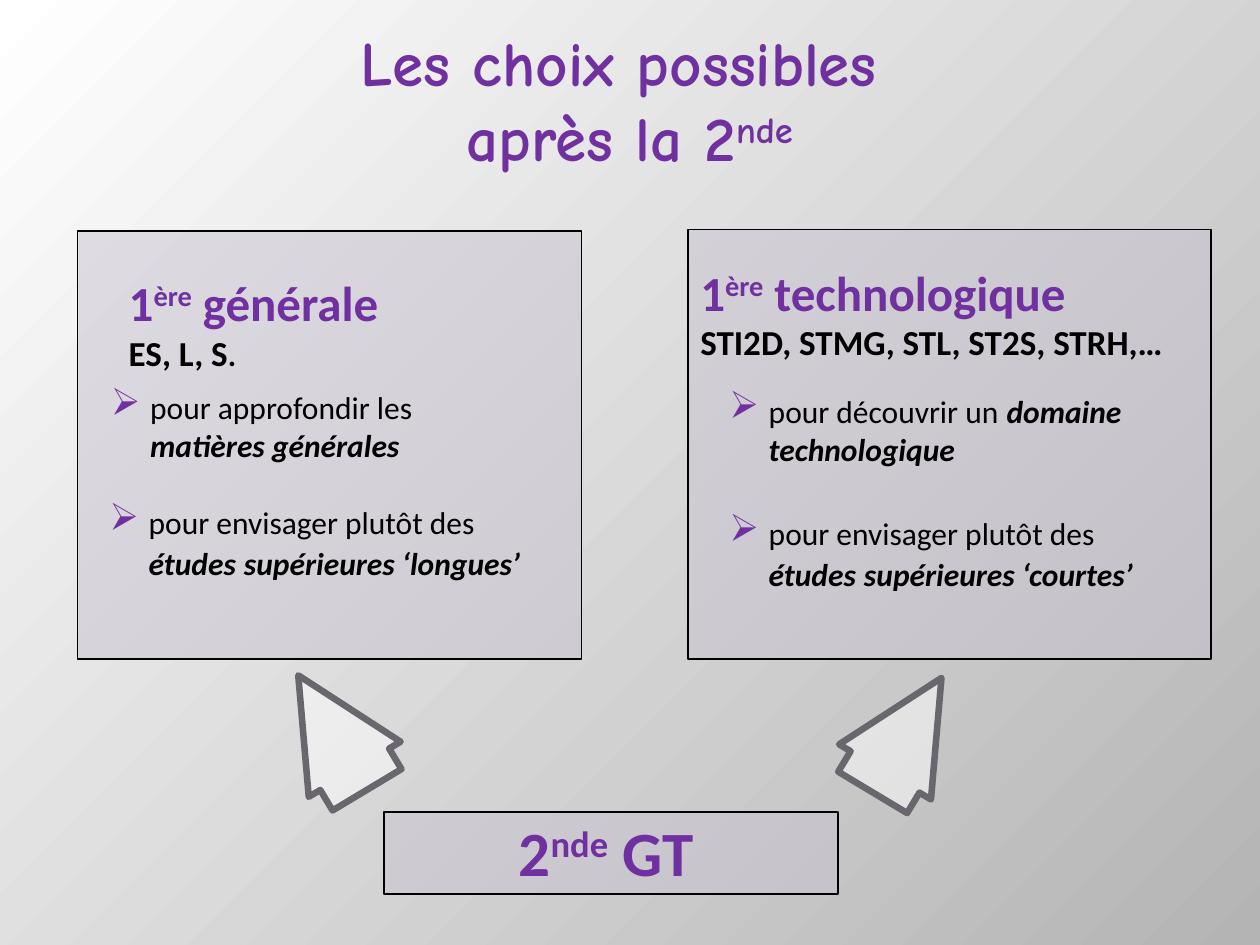
from lxml import etree
from pptx import Presentation
from pptx.dml.color import RGBColor
from pptx.enum.shapes import MSO_SHAPE
from pptx.enum.text import MSO_ANCHOR, PP_ALIGN
from pptx.oxml.ns import qn
from pptx.util import Pt

RECTANGLE, LEFT_ARROW = MSO_SHAPE.RECTANGLE, MSO_SHAPE.LEFT_ARROW
CENTER, LEFT = PP_ALIGN.CENTER, PP_ALIGN.LEFT
MIDDLE, TOP = MSO_ANCHOR.MIDDLE, MSO_ANCHOR.TOP
COLORS = {"purple": "7030A0", "black": "000000", "white": "FFFFFF",
          "silver": "B4B4B4", "lilac": "C9C2D1", "slate": "69676D"}

prs = Presentation()
prs.slide_width, prs.slide_height = Pt(720), Pt(540)
slide = prs.slides.add_slide(prs.slide_layouts[6])


def add_panel(kind, place, fill, line, weight):
    panel = slide.shapes.add_shape(kind, *map(Pt, place))
    panel.shadow.inherit = False
    panel.fill.solid()
    panel.fill.fore_color.rgb = RGBColor.from_string(COLORS[fill])
    color = panel.fill._xPr.find(qn("a:solidFill"))[0]
    etree.SubElement(color, qn("a:alpha"), val="50000")
    panel.line.color.rgb = RGBColor.from_string(COLORS[line])
    panel.line.width = Pt(weight)
    return panel


def add_text(place, paragraphs, align=LEFT, anchor=TOP, font="Calibri", bullet=False):
    frame = slide.shapes.add_textbox(*map(Pt, place)).text_frame
    frame.word_wrap = True
    frame.vertical_anchor = anchor
    for index, runs in enumerate(paragraphs):
        paragraph = frame.paragraphs[0] if index == 0 else frame.add_paragraph()
        paragraph.alignment = align
        if bullet:
            props = paragraph._p.get_or_add_pPr()
            props.set("marL", str(Pt(22.5)))
            props.set("indent", str(-Pt(22.5)))
            mark_color = etree.SubElement(props, qn("a:buClr"))
            etree.SubElement(mark_color, qn("a:srgbClr"), val=COLORS["purple"])
            etree.SubElement(props, qn("a:buSzPct"), val="120000")
            etree.SubElement(props, qn("a:buChar"), char="➢")
        for words, size, color, style in runs:
            if words == "\n":
                paragraph.add_line_break()
                continue
            run = paragraph.add_run()
            run.text = words
            run.font.name = font
            run.font.size = Pt(size)
            run.font.bold = "b" in style
            run.font.italic = "i" in style
            run.font.color.rgb = RGBColor.from_string(COLORS[color])
            if "^" in style:
                run._r.get_or_add_rPr().set("baseline", "30000")


backdrop = slide.background.fill
backdrop.gradient()
for stop, color, position in zip(backdrop.gradient_stops, ("white", "silver"), (0, 1)):
    stop.color.rgb = RGBColor.from_string(COLORS[color])
    stop.position = position
gradient = backdrop._xPr.find(qn("a:gradFill"))
gradient.remove(gradient.find(qn("a:lin")))
radial = etree.SubElement(gradient, qn("a:path"), path="circle")
etree.SubElement(radial, qn("a:fillToRect"), r="100000", b="100000")

add_text((54, 11.5, 612, 90),
         [[("Les choix possibles ", 36, "purple", "b"), ("\n", 36, "purple", ""),
           ("après la 2", 36, "purple", "b"), ("nde", 36, "purple", "b^")]],
         CENTER, MIDDLE, "Comic Neue")

for left, top, angle, mirrored in ((151.9, 388, 59, False), (480.2, 389.5, 301, True)):
    arrow = add_panel(LEFT_ARROW, (left, top, 76.3, 61.2), "white", "slate", 3.75)
    arrow.adjustments[0], arrow.adjustments[1] = 0.75, 1.024
    arrow.rotation = angle
    if mirrored:
        arrow._element.spPr.xfrm.set("flipH", "1")

for place in ((219.6, 464.2, 259.2, 46.8), (44.3, 132, 288, 244.8), (393.1, 131.2, 298.8, 245.6)):
    add_panel(RECTANGLE, place, "lilac", "black", 1)

add_text((277.2, 461.5, 138.2, 50.4),
         [[("2", 36, "purple", "b"), ("nde", 36, "purple", "b^"), (" GT", 36, "purple", "b")]],
         CENTER)

for place, track, series in (
        ((66.5, 152, 200, 65.5), " générale", [("ES, L, S", 20, "black", "b"), (".", 18, "black", "b")]),
        ((393.1, 146.2, 310.3, 65), " technologique",
         [("STI2D, STMG, STL, ST2S, STRH,…", 20, "black", "b")])):
    add_text(place, [[("1", 28, "purple", "b"), ("ère", 28, "purple", "b^"),
                      (track, 28, "purple", "b")], series])

add_text((56.2, 218.2, 248.4, 56.9),
         [[("pour approfondir les", 18, "black", ""), ("\n", 18, "black", ""),
           ("matières générales", 18, "black", "bi")]], bullet=True)
add_text((409.7, 218.2, 265.7, 56.9),
         [[("pour découvrir un", 18, "black", ""), (" ", 20, "black", ""),
           ("domaine technologique", 18, "black", "bi")]], bullet=True)

for left, top, length in ((55.4, 283.7, "‘longues’"), (409.7, 290.2, "‘courtes’")):
    add_text((left, top, 265.7, 51.1),
             [[("pour envisager plutôt des ", 18, "black", ""), ("études", 18, "black", "bi"),
               (" ", 20, "black", "bi"), ("supérieures " + length, 18, "black", "bi")]], bullet=True)

prs.save("out.pptx")
